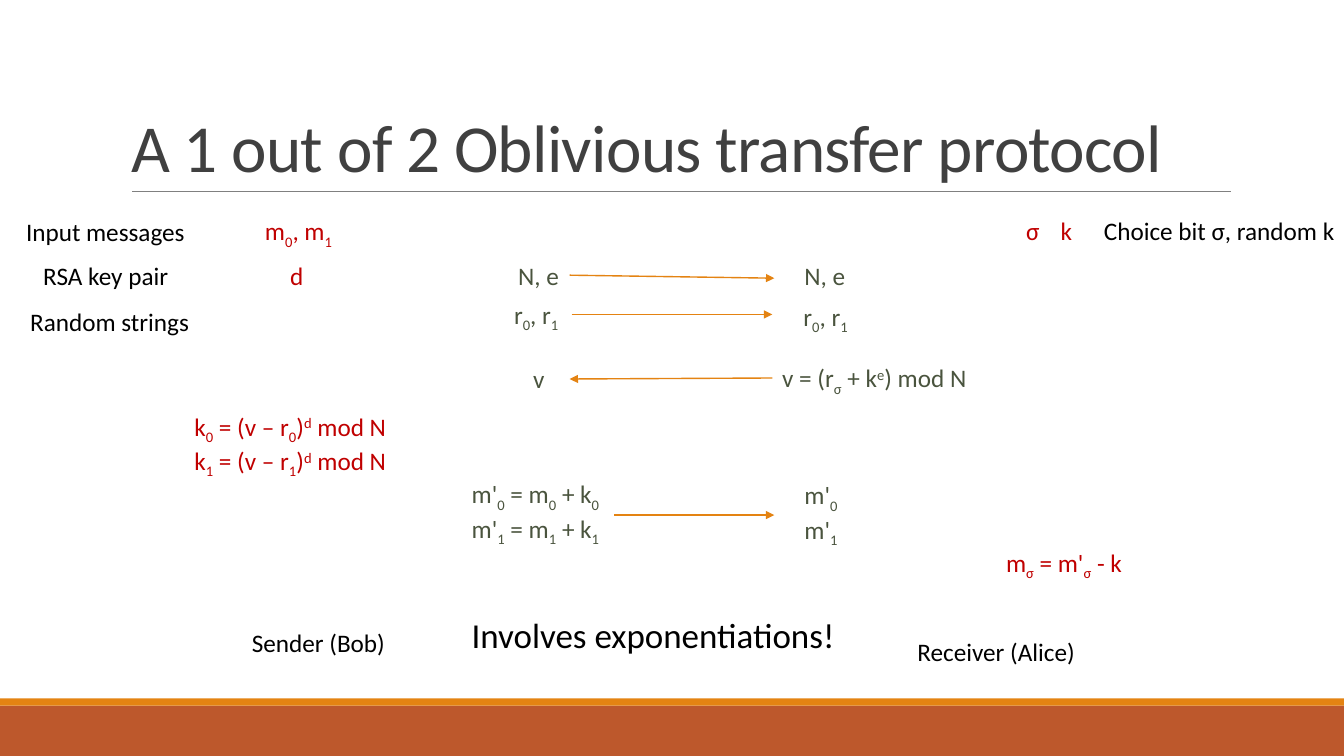
from pptx import Presentation
from pptx import util as u
from pptx.dml.color import RGBColor
from pptx.enum import shapes, text
from pptx.oxml import parse_xml
from pptx.oxml.ns import nsdecls

PX = 9144  # 100 px to the inch
WIDTH, HEIGHT = 1333, 750
LINE_HEIGHT = 40
PAIR_STEP = 34

BLACK = RGBColor(0x00, 0x00, 0x00)
SECRET = RGBColor(0xC0, 0x00, 0x00)
PUBLIC = RGBColor(0x4A, 0x54, 0x3E)
TITLE_GREY = RGBColor(0x40, 0x40, 0x40)
RULE_GREY = RGBColor(0x80, 0x80, 0x80)
ORANGE = RGBColor(0xE4, 0x83, 0x12)
RUST = RGBColor(0xBD, 0x58, 0x2C)

BASELINES = {"_": "-25000", "^": "30000"}


def px(*lengths):
    return [u.Emu(length * PX) for length in lengths]


def split_formula(formula):
    """Yield (text, mark) pieces; _ lowers and ^ raises the next character."""
    plain, characters = "", iter(formula)
    for character in characters:
        if character in BASELINES:
            if plain:
                yield plain, None
            yield next(characters), character
            plain = ""
        else:
            plain += character
    if plain:
        yield plain, None


def add_formula(slide, x, y, width, formula, color, size=18, height=LINE_HEIGHT, wrap=False):
    frame = slide.shapes.add_textbox(*px(x, y, width, height)).text_frame
    frame.word_wrap = wrap
    frame.auto_size = text.MSO_AUTO_SIZE.SHAPE_TO_FIT_TEXT
    for piece, mark in split_formula(formula):
        run = frame.paragraphs[0].add_run()
        run.text = piece
        run.font.name = "Calibri"
        run.font.size = u.Pt(size)
        run.font.color.rgb = color
        if mark:
            run.font._element.set("baseline", BASELINES[mark])


def add_line(slide, start, end, color, weight, arrow=False):
    line = slide.shapes.add_connector(shapes.MSO_CONNECTOR.STRAIGHT, *px(*start, *end))
    line.line.color.rgb = color
    line.line.width = u.Pt(weight)
    if arrow:
        line.line._get_or_add_ln().append(
            parse_xml(f'<a:tailEnd {nsdecls("a")} type="triangle"/>'))
    line._element.spPr.append(parse_xml(f'<a:effectLst {nsdecls("a")}/>'))


def add_bands(slide, y):
    for top, height, color in ((y + 7, 50, RUST), (y, 7, ORANGE)):
        band = slide.shapes.add_shape(shapes.MSO_SHAPE.RECTANGLE, *px(0, top, WIDTH, height))
        band.shadow.inherit = False
        band.fill.solid()
        band.fill.fore_color.rgb = color
        band.line.fill.background()


def add_title(slide, x, y, width, height):
    title = slide.shapes.title
    title.left, title.top, title.width, title.height = px(x, y, width, height)
    frame = title.text_frame
    frame.text = "A 1 out of 2 Oblivious transfer protocol"
    frame.word_wrap = True
    frame.auto_size = text.MSO_AUTO_SIZE.NONE
    frame.vertical_anchor = text.MSO_ANCHOR.BOTTOM
    heading = frame.paragraphs[0]
    heading.alignment = text.PP_ALIGN.LEFT
    heading.line_spacing = 0.85
    font = heading.runs[0].font
    font.name = "Calibri"
    font.size = u.Pt(48)
    font.color.rgb = TITLE_GREY
    font._element.set("spc", "-50")
    add_line(slide, (x + 11, y + height), (x + 1101, y + height), RULE_GREY, 0.5)


def add_sender(slide, x, y):
    for dx, dy, width, label in (
        (0, 1, 179, "Input messages"),
        (17, 44, 145, "RSA key pair"),
        (4, 90, 179, "Random strings"),
        (224, 408, 154, "Sender (Bob)"),
    ):
        add_formula(slide, x + dx, y + dy, width, label, BLACK)
    add_formula(slide, x + 237, y, 90, "m_0, m_1", SECRET)
    add_formula(slide, x + 262, y + 44, 34, "d", SECRET)
    for i, width in enumerate((224, 216)):
        add_formula(slide, x + 167, y + 194 + i * PAIR_STEP, width,
                    f"k_{i} = (v – r_{i})^d mod N", SECRET)


def add_exchange(slide, x, y):
    """Messages sent between the two parties, with their arrows."""
    for dx, dy, width, message in (
        (46, 0, 61, "N, e"),
        (330, 0, 61, "N, e"),
        (42, 39, 67, "r_0, r_1"),
        (329, 41, 67, "r_0, r_1"),
        (61, 103, 32, "v"),
        (308, 102, 207, "v = (r_σ + k^e) mod N"),
    ):
        add_formula(slide, x + dx, y + dy, width, message, PUBLIC)
    for i in range(2):
        top = y + 217 + i * PAIR_STEP
        add_formula(slide, x, top, 152, f"m'_{i} = m_{i} + k_{i}", PUBLIC)
        add_formula(slide, x + 330, top + 1, 55, f"m'_{i}", PUBLIC)
    for x1, y1, x2, y2 in (
        (107, 20, 310, 23),
        (109, 59, 308, 59),
        (308, 122, 107, 123),
        (151, 258, 310, 258),
    ):
        add_line(slide, (x + x1, y + y1), (x + x2, y + y2), ORANGE, 1, arrow=True)
    add_formula(slide, x, y + 351, 384, "Involves exponentiations!", BLACK, size=25, height=52)


def add_receiver(slide, x, y):
    add_formula(slide, x + 108, y, 34, "σ", SECRET)
    add_formula(slide, x + 142, y, 32, "k", SECRET)
    add_formula(slide, x + 185, y, 252, "Choice bit σ, random k", BLACK)
    add_formula(slide, x + 88, y + 329, 143, "m_σ = m'_σ - k", SECRET)
    add_formula(slide, x, y + 417, 185, "Receiver (Alice)", BLACK, wrap=True)


def main():
    deck = Presentation()
    deck.slide_width, deck.slide_height = px(WIDTH, HEIGHT)
    slide = deck.slides.add_slide(deck.slide_layouts[5])
    add_bands(slide, 693)
    add_title(slide, 120, 31, 1100, 159)
    add_sender(slide, 16, 209)
    add_exchange(slide, 458, 253)
    add_receiver(slide, 900, 209)
    deck.save("out.pptx")


if __name__ == "__main__":
    main()
